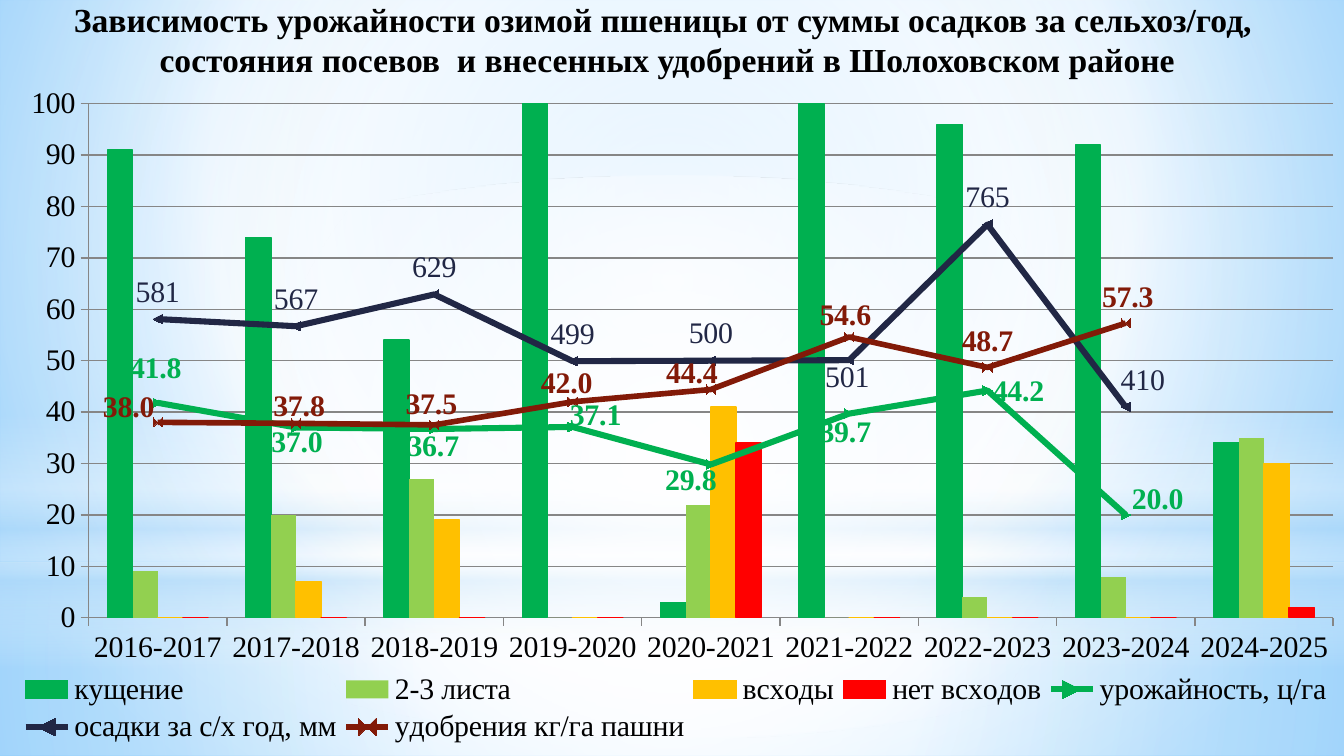
from pptx import Presentation
from pptx.chart.data import CategoryChartData
from pptx.dml.color import RGBColor
from pptx.enum.chart import XL_CHART_TYPE as CT, XL_LABEL_POSITION as POS
from pptx.enum.chart import XL_LEGEND_POSITION, XL_MARKER_STYLE, XL_TICK_MARK
from pptx.enum.shapes import MSO_SHAPE as SHAPE
from pptx.enum.text import MSO_ANCHOR, PP_ALIGN
from pptx.oxml import parse_xml
from pptx.oxml.ns import nsdecls
from pptx.util import Emu, Pt

PX = 914400 / 134.4
FONT = "Times New Roman"
BLACK = RGBColor(0x00, 0x00, 0x00)
GRAY = RGBColor(0x86, 0x86, 0x86)
GREEN = RGBColor(0x00, 0xB0, 0x50)
LIME = RGBColor(0x92, 0xD0, 0x50)
AMBER = RGBColor(0xFF, 0xC0, 0x00)
RED = RGBColor(0xFF, 0x00, 0x00)
NAVY = RGBColor(0x21, 0x27, 0x45)
MAROON = RGBColor(0x82, 0x1A, 0x08)
WHITE = RGBColor(0xFF, 0xFF, 0xFF)
SKY = RGBColor(0xB4, 0xDC, 0xFA)
PALE_BLUE = RGBColor(0x9E, 0xD5, 0xFF)
BLUE = RGBColor(0x5B, 0xB9, 0xFF)

TITLE = ["Зависимость урожайности озимой пшеницы от суммы осадков за сельхоз/год, ",
         "состояния посевов  и внесенных удобрений в Шолоховском районе"]
YEARS = [f"{year}-{year + 1}" for year in range(2016, 2025)]
# name, colour, outlined, values
BARS = [
    ("кущение", GREEN, True, [91, 74, 54, 100, 3, 100, 96, 92, 34]),
    ("2-3 листа", LIME, False, [9, 20, 27, 0, 22, 0, 4, 8, 35]),
    ("всходы", AMBER, True, [0, 7, 19, 0, 41, 0, 0, 0, 30]),
    ("нет всходов", RED, True, [0, 0, 0, 0, 34, 0, 0, 0, 2]),
]
# name, colour, line width, values, label texts, label shifts in px
LINES = [
    ("урожайность, ц/га", GREEN, 3.25,
     [41.8, 37, 36.7, 37.1, 29.8, 39.7, 44.2, 20, None], None,
     [(-2, -7), (1, 42), (-1, 44), (23, 16), (-20, 43), (-4, 46), (31, 28), (32, 12)]),
    ("осадки за с/х год, мм", NAVY, 3.25,
     [58.1, 56.7, 62.9, 49.9, 50, 50.1, 76.5, 41, None],
     ["581", "567", "629", "499", "500", "501", "765", "410"],
     [(0, 0)] * 5 + [(-2, 44), (0, 0), (17, 0)]),
    ("удобрения кг/га пашни", MAROON, 3,
     [38, 37.8, 37.5, 42, 44.4, 54.6, 48.7, 57.3, None], None,
     [(-29, 12), (3, 10), (-3, 7), (-6, 9), (-19, 11), (-4, 5), (0, 1), (2, 1)]),
]


def box(*lengths):
    return [Emu(round(n * PX)) for n in lengths]


def put_gradient(solid, stops, to=None):
    """Swap a solid fill for a circular gradient, or a vertical one without to."""
    gs = "".join(f'<a:gs pos="{pos * 1000}"><a:srgbClr val="{color}">'
                 f'<a:alpha val="{alpha * 1000}"/></a:srgbClr></a:gs>'
                 for pos, color, alpha in stops)
    if to:
        rect = " ".join(f'{side}="{n * 1000}"' for side, n in zip("ltrb", to))
        way = f'<a:path path="circle"><a:fillToRect {rect}/></a:path>'
    else:
        way = '<a:lin ang="5400000" scaled="0"/>'
    solid.getparent().replace(solid, parse_xml(
        f'<a:gradFill {nsdecls("a")} rotWithShape="1"><a:gsLst>{gs}</a:gsLst>{way}</a:gradFill>'))


def layout(x, y, head="", tail=""):
    return parse_xml(f'<c:layout {nsdecls("c")}><c:manualLayout>{head}'
                     f'<c:x val="{x}"/><c:y val="{y}"/>{tail}</c:manualLayout></c:layout>')


def edge_layout(x, y, w, h, target=""):
    return layout(x, y, f'{target}<c:xMode val="edge"/><c:yMode val="edge"/>',
                  f'<c:w val="{w}"/><c:h val="{h}"/>')


def split_lines(chart, first):
    """Move the series from number first on into a line plot on the same axes."""
    bars = chart.element.xpath(".//c:barChart")[0]
    axes = "".join(f'<c:axId val="{a.get("val")}"/>' for a in bars.xpath("c:axId"))
    lines = parse_xml(f'<c:lineChart {nsdecls("c")}><c:grouping val="standard"/>'
                      f'<c:varyColors val="0"/><c:marker val="1"/>{axes}</c:lineChart>')
    marker = lines.xpath("c:marker")[0]
    for ser in bars.xpath("c:ser")[first:]:
        for flag in ser.xpath("c:invertIfNegative"):
            ser.remove(flag)
        marker.addprevious(ser)
    bars.addnext(lines)


class Deck:
    def __init__(self):
        self.prs = Presentation()
        self.prs.slide_width, self.prs.slide_height = box(1344, 756)
        self.s = self.prs.slides.add_slide(self.prs.slide_layouts[6])

    def style(self, font, size, color, bold=False):
        font.name, font.size, font.bold = FONT, Pt(size), bold
        font.color.rgb = color

    def background(self, stops, to):
        self.s.background.fill.solid()
        put_gradient(self.s.element.xpath(".//p:bgPr/a:solidFill")[0], stops, to)

    def glow(self, kind, at, stops, to=None):
        sp = self.s.shapes.add_shape(kind, *box(*at))
        sp.shadow.inherit = False
        sp.line.fill.background()
        sp.fill.solid()
        put_gradient(sp.element.xpath("./p:spPr/a:solidFill")[0], stops, to)

    def title(self, at, lines):
        tf = self.s.shapes.add_textbox(*box(*at)).text_frame
        tf.word_wrap = True
        tf.vertical_anchor = MSO_ANCHOR.MIDDLE
        tf.text = "\n".join(lines)
        tf.paragraphs[0].line_spacing = 0.7
        for p in tf.paragraphs:
            p.alignment = PP_ALIGN.CENTER
            self.style(p.runs[0].font, 18, BLACK, True)

    def chart(self, at):
        data = CategoryChartData()
        data.categories = YEARS
        for name, _, _, values in BARS:
            data.add_series(name, values, "0")
        for name, _, _, values, _, _ in LINES:
            data.add_series(name, values, "0.0")
        chart = self.s.shapes.add_chart(CT.COLUMN_CLUSTERED, *box(*at), data).chart
        self.style(chart.font, 16, BLACK)
        chart.has_title = False
        self.legend(chart)
        split_lines(chart, len(BARS))
        self.axes(chart)
        bars, lines = chart.plots
        bars.gap_width, bars.overlap = 150, 0
        bars.vary_by_categories = False
        for series, (_, color, outlined, _) in zip(bars.series, BARS):
            series.format.fill.solid()
            series.format.fill.fore_color.rgb = color
            if outlined:
                series.format.line.color.rgb = color
                series.format.line.width = Pt(0.75)
        for series, (_, color, width, _, texts, shifts) in zip(lines.series, LINES):
            self.line_series(series, color, width, texts, len(shifts))
        shifts = [shift for line in LINES for shift in line[-1]]
        for label, (dx, dy) in zip(chart.element.xpath(".//c:dLbl"), shifts):
            if dx or dy:
                label.insert(1, layout(round(dx / at[2], 4), round(dy / at[3], 4)))

    def legend(self, chart):
        chart.has_legend = True
        chart.legend.position = XL_LEGEND_POSITION.BOTTOM
        chart.legend.include_in_layout = False
        for old in chart.element.xpath(".//c:legend/c:layout"):
            old.getparent().remove(old)
        chart.element.xpath(".//c:legend/c:legendPos")[0].addnext(
            edge_layout(0, 0.88, 1, 0.12))

    def axes(self, chart):
        area = chart.element.xpath(".//c:plotArea")[0]
        for old in area.xpath("c:layout"):
            area.remove(old)
        area.insert(0, edge_layout(0.055, 0.025, 0.943, 0.778,
                                   '<c:layoutTarget val="inner"/>'))
        scale = chart.value_axis
        scale.minimum_scale, scale.maximum_scale, scale.major_unit = 0, 100, 10
        scale.has_major_gridlines = True
        scale.tick_labels.number_format = "0"
        scale.tick_labels.number_format_is_linked = False
        for axis in (scale, chart.category_axis):
            axis.major_tick_mark = XL_TICK_MARK.OUTSIDE
        for part in (scale, scale.major_gridlines, chart.category_axis):
            part.format.line.color.rgb = GRAY
            part.format.line.width = Pt(0.75)

    def line_series(self, series, color, width, texts, count):
        series.smooth = False
        series.format.line.color.rgb = color
        series.format.line.width = Pt(width)
        marker = series.marker
        marker.style, marker.size = XL_MARKER_STYLE.AUTOMATIC, 5
        marker.format.fill.solid()
        marker.format.fill.fore_color.rgb = color
        marker.format.line.color.rgb = color
        labels = series.data_labels
        labels.show_value = True
        labels.number_format, labels.number_format_is_linked = "0.0", False
        labels.position = POS.ABOVE
        self.style(labels.font, 16, color, True)
        for i in range(count):
            label = series.points[i].data_label
            if texts:
                label.text_frame.text = texts[i]
                self.style(label.text_frame.paragraphs[0].runs[0].font, 16, color)
            else:
                self.style(label.font, 16, color, True)
            label.position = POS.ABOVE


def main():
    deck = Deck()
    center = (50, 50, 50, 50)
    deck.background([(0, PALE_BLUE, 100), (60, WHITE, 100), (100, BLUE, 100)], (20, 10, 20, 60))
    deck.glow(SHAPE.RECTANGLE, (0, 563, 1344, 193),
              [(0, WHITE, 91), (37, WHITE, 76), (100, SKY, 79)], center)
    deck.glow(SHAPE.RECTANGLE, (0, 0, 1344, 563),
              [(0, WHITE, 89), (48, WHITE, 62), (100, SKY, 79)], center)
    deck.glow(SHAPE.RECTANGLE, (0, 415, 1344, 253),
              [(0, WHITE, 0), (29, WHITE, 30), (45, SKY, 40),
               (55, WHITE, 26), (65, SKY, 60), (100, WHITE, 0)])
    deck.glow(SHAPE.OVAL, (0, 176, 1344, 563), [(0, WHITE, 100), (56, WHITE, 0)], center)
    deck.title((-9, 3, 1353, 83), TITLE)
    deck.chart((16, 87, 1320, 661))
    deck.prs.save("out.pptx")


if __name__ == "__main__":
    main()
